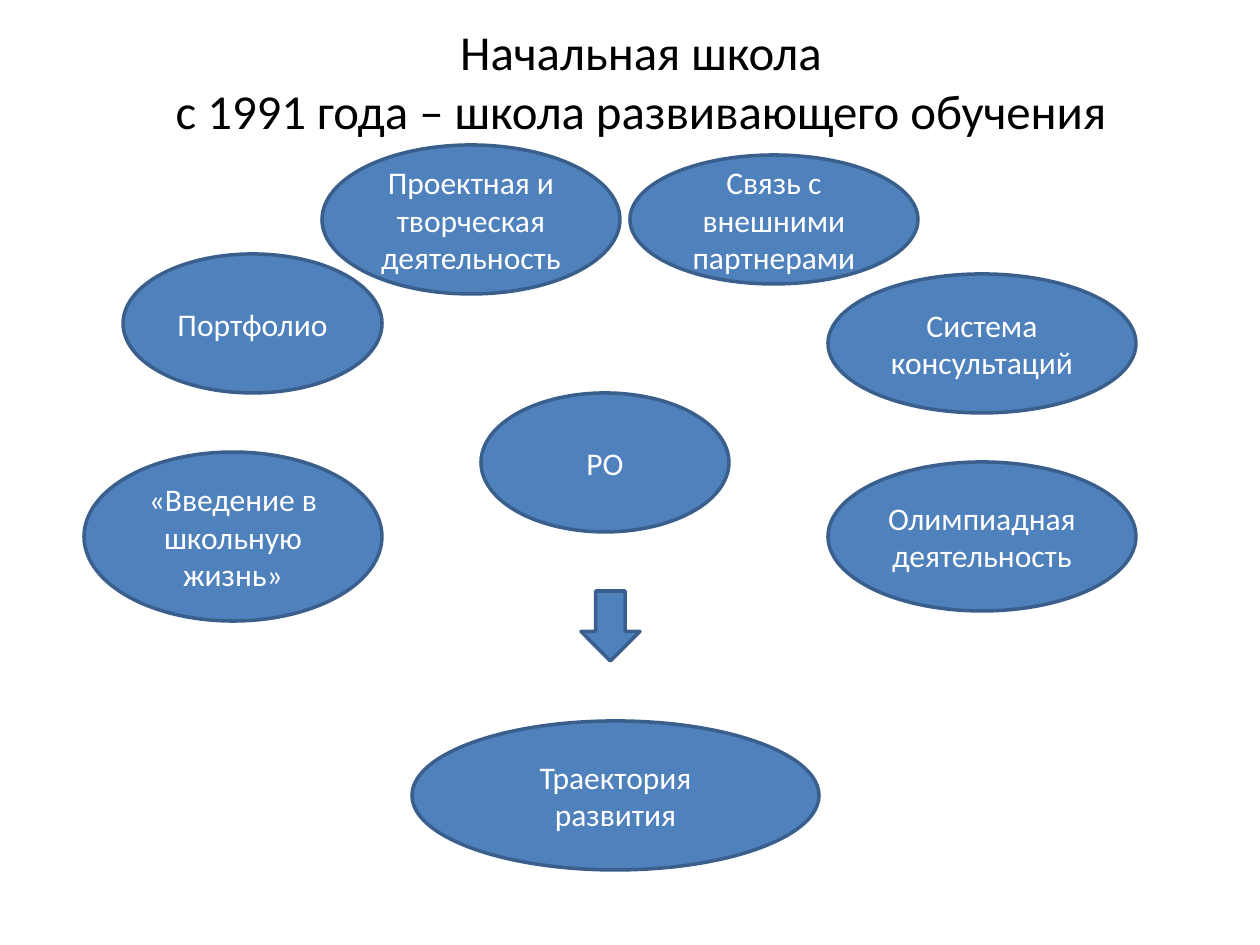
import pptx
import pptx.dml.color
import pptx.enum.shapes
import pptx.enum.text
import pptx.util

RGBColor = pptx.dml.color.RGBColor
Shape = pptx.enum.shapes.MSO_SHAPE

BLACK = RGBColor(0x00, 0x00, 0x00)
WHITE = RGBColor(0xFF, 0xFF, 0xFF)
BLUE = RGBColor(0x4F, 0x81, 0xBD)
DARK_BLUE = RGBColor(0x3A, 0x5F, 0x8C)

PX_PER_INCH = 126
SLIDE_WIDTH, SLIDE_HEIGHT = 1260, 945


def px(length):
    return pptx.util.Emu(round(length * pptx.util.Inches(1) / PX_PER_INCH))


class SlideBuilder:
    """Holds the style and the slide being built."""

    font_name = "Calibri"
    title_size = 27.9
    label_size = 18
    outline_width = 2

    def __init__(self, slide):
        self.slide = slide

    def add_lines(self, frame, lines, size, color):
        """Put centred lines, parted by line breaks, into one paragraph."""
        frame.word_wrap = True
        frame.vertical_anchor = pptx.enum.text.MSO_ANCHOR.MIDDLE
        paragraph = frame.paragraphs[0]
        paragraph.alignment = pptx.enum.text.PP_ALIGN.CENTER
        for number, line in enumerate(lines):
            if number:
                paragraph.add_line_break()
            run = paragraph.add_run()
            run.text = line
            run.font.name = self.font_name
            run.font.size = pptx.util.Pt(size)
            run.font.color.rgb = color

    def title(self, box, lines):
        frame = self.slide.shapes.add_textbox(*map(px, box)).text_frame
        frame.margin_bottom = px(24)
        self.add_lines(frame, lines, self.title_size, BLACK)

    def figure(self, preset, box):
        shape = self.slide.shapes.add_shape(preset, *map(px, box))
        shape.shadow.inherit = False
        shape.fill.solid()
        shape.fill.fore_color.rgb = BLUE
        shape.line.color.rgb = DARK_BLUE
        shape.line.width = pptx.util.Pt(self.outline_width)
        return shape

    def ellipse(self, box, label):
        shape = self.figure(Shape.OVAL, box)
        self.add_lines(shape.text_frame, [label], self.label_size, WHITE)

    def down_arrow(self, box):
        self.figure(Shape.DOWN_ARROW, box)


TITLE = ["Начальная школа", "с 1991 года – школа развивающего обучения"]

# Left, top, width, height and label
TOPICS = [
    ((481, 393, 248, 139), "РО"),
    ((84, 452, 298, 169), "«Введение в школьную жизнь»"),
    ((123, 254, 259, 139), "Портфолио"),
    ((322, 145, 298, 149), "Проектная и творческая деятельность"),
    ((828, 274, 308, 139), "Система консультаций"),
    ((828, 462, 308, 149), "Олимпиадная деятельность"),
    ((412, 721, 407, 149), "Траектория развития"),
    ((630, 155, 288, 129), "Связь с внешними партнерами"),
]


def main():
    presentation = pptx.Presentation()
    presentation.slide_width = px(SLIDE_WIDTH)
    presentation.slide_height = px(SLIDE_HEIGHT)
    blank_layout = presentation.slide_layouts[6]
    builder = SlideBuilder(presentation.slides.add_slide(blank_layout))

    builder.title((74, 26, 1134, 127), TITLE)
    for box, label in TOPICS:
        builder.ellipse(box, label)
    builder.down_arrow((581, 591, 59, 70))

    presentation.save("out.pptx")


if __name__ == "__main__":
    main()
